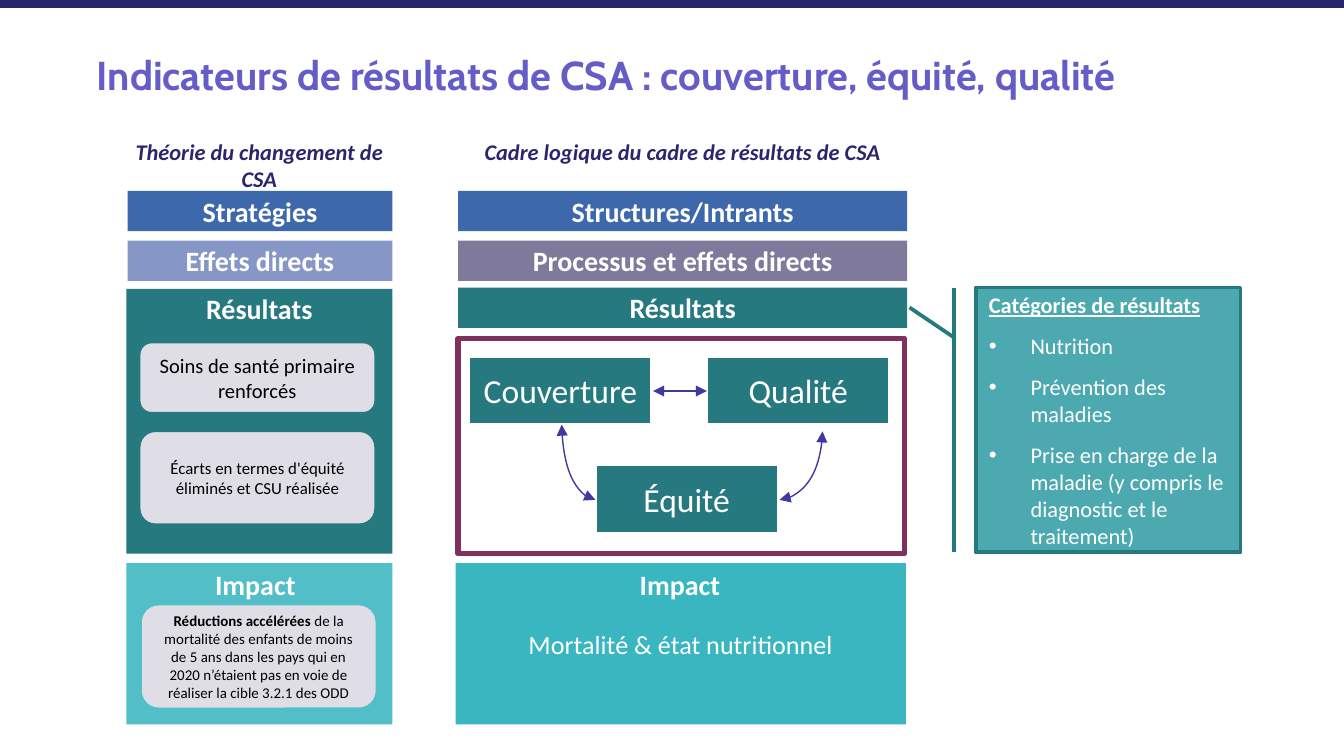
"""Build the slide on result indicators: coverage, equity and quality."""
from dataclasses import dataclass
from typing import Optional

from lxml import etree
from pptx import Presentation
from pptx.dml.color import RGBColor
from pptx.enum import shapes, text
from pptx.oxml import ns
from pptx.util import Inches, Pt

WHITE = RGBColor(0xFF, 0xFF, 0xFF)
BLACK = RGBColor(0, 0, 0)
NAVY = RGBColor(0x2A, 0x24, 0x6C)
HEADING = RGBColor(0x2A, 0x25, 0x6C)
VIOLET = RGBColor(0x64, 0x5D, 0xC7)
BLUE = RGBColor(0x3D, 0x69, 0xAC)
PERIWINKLE = RGBColor(0x86, 0x96, 0xC7)
MAUVE = RGBColor(0x7F, 0x7A, 0x9B)
TEAL = RGBColor(0x26, 0x79, 0x7F)
TURQUOISE = RGBColor(0x39, 0xB6, 0xC0)
PALE_TURQUOISE = RGBColor(0x53, 0xBF, 0xC8)
CALLOUT_FILL = RGBColor(0x4D, 0xA9, 0xB0)
LILAC = RGBColor(0xDF, 0xDE, 0xE6)
INDIGO = RGBColor(0x3F, 0x38, 0xA2)
PLUM = RGBColor(0x7F, 0x30, 0x5D)

RECTANGLE = shapes.MSO_SHAPE.RECTANGLE
ROUNDED = shapes.MSO_SHAPE.ROUNDED_RECTANGLE
CALLOUT = shapes.MSO_SHAPE.LINE_CALLOUT_1_BORDER_AND_ACCENT_BAR
THEORY_LEFT, THEORY_WIDTH = 0.95, 1.97
FRAME_LEFT, FRAME_WIDTH = 3.41, 3.34
NODE_WIDTH, NODE_HEIGHT = 1.36, 0.51


@dataclass
class Box:
    left: float
    top: float
    width: float
    height: float
    fill: Optional[RGBColor] = None
    text: str = ""
    size: float = 15
    bold: bool = False
    color: RGBColor = WHITE
    line: Optional[RGBColor] = None
    line_width: float = 0.75
    shape: shapes.MSO_SHAPE = RECTANGLE
    alpha: int = 100
    bold_lead: str = ""


@dataclass
class Label:
    left: float
    top: float
    width: float
    height: float
    text: str
    size: float = 15
    color: RGBColor = WHITE
    italic: bool = False


@dataclass
class Arrow:
    start: tuple[float, float]
    end: tuple[float, float]
    preset: str = "curvedConnector2"


def band(left: float, top: float, width: float, fill: RGBColor, caption: str) -> Box:
    """Describe a bold one-line band."""
    return Box(left, top, width, 0.3, fill, caption, bold=True)


def node(left: float, top: float, caption: str) -> Box:
    """Describe one of the three linked result dimensions."""
    return Box(left, top, NODE_WIDTH, NODE_HEIGHT, TEAL, caption, 18, line=WHITE, line_width=1.5)


def card(left: float, top: float, height: float, caption: str, size: float,
         line: RGBColor = TEAL, bold_lead: str = "") -> Box:
    """Describe a rounded card in the theory column."""
    return Box(left, top, 1.75, height, LILAC, caption, size, color=BLACK,
               line=line, shape=ROUNDED, bold_lead=bold_lead)


def set_font(paragraph, size: float, color: RGBColor, bold: Optional[bool] = None,
             italic: Optional[bool] = None, name: str = "Calibri") -> None:
    """Set the font of a whole paragraph."""
    font = paragraph.font
    font.name, font.size, font.bold, font.italic = name, Pt(size), bold, italic
    font.color.rgb = color


def set_frame(frame, anchor: text.MSO_ANCHOR, side: float = 0.07, edge: float = 0.04) -> None:
    """Set wrapping, anchor and margins of a text frame."""
    frame.word_wrap = True
    frame.vertical_anchor = anchor
    frame.margin_left = frame.margin_right = Inches(side)
    frame.margin_top = frame.margin_bottom = Inches(edge)


def add_box(slide, box: Box):
    """Draw a filled or outlined shape with its text."""
    shape = slide.shapes.add_shape(box.shape, Inches(box.left), Inches(box.top),
                                   Inches(box.width), Inches(box.height))
    shape.shadow.inherit = False
    if box.fill is None:
        shape.fill.background()
    else:
        shape.fill.solid()
        shape.fill.fore_color.rgb = box.fill
    if box.alpha < 100:
        color = shape._element.spPr.find(".//" + ns.qn("a:srgbClr"))
        etree.SubElement(color, ns.qn("a:alpha"), val=str(box.alpha * 1000))
    if box.line is None:
        shape.line.fill.background()
    else:
        shape.line.color.rgb = box.line
        shape.line.width = Pt(box.line_width)
    if box.text:
        set_frame(shape.text_frame, text.MSO_ANCHOR.MIDDLE)
        paragraph = shape.text_frame.paragraphs[0]
        paragraph.alignment = text.PP_ALIGN.CENTER
        set_font(paragraph, box.size, box.color, box.bold)
        if box.bold_lead:
            lead = paragraph.add_run()
            lead.text = box.bold_lead
            lead.font.bold = True
        paragraph.add_run().text = box.text
    return shape


def add_label(slide, label: Label) -> None:
    """Draw a centred bold text box."""
    shape = slide.shapes.add_textbox(Inches(label.left), Inches(label.top),
                                     Inches(label.width), Inches(label.height))
    set_frame(shape.text_frame, text.MSO_ANCHOR.TOP)
    paragraph = shape.text_frame.paragraphs[0]
    paragraph.text = label.text
    paragraph.alignment = text.PP_ALIGN.CENTER
    set_font(paragraph, label.size, label.color, True, label.italic)


def add_arrow(slide, arrow: Arrow) -> None:
    """Draw a curved connector with a head at both ends."""
    connector = slide.shapes.add_connector(shapes.MSO_CONNECTOR.CURVE,
                                           *map(Inches, arrow.start + arrow.end))
    connector.line.color.rgb = INDIGO
    connector.line.width = Pt(0.75)
    properties = connector._element.spPr
    properties.find(ns.qn("a:prstGeom")).set("prst", arrow.preset)
    line = properties.find(ns.qn("a:ln"))
    for end in ("a:headEnd", "a:tailEnd"):
        etree.SubElement(line, ns.qn(end), type="triangle")
    etree.SubElement(properties, ns.qn("a:effectLst"))


def add_callout(slide, box: Box, heading: str, items: list[str]) -> None:
    """Draw the accent callout with its underlined heading and bullets."""
    shape = add_box(slide, box)
    for index, value in enumerate((0.188, -0.083, 0.075, -0.25)):
        shape.adjustments[index] = value
    frame = shape.text_frame
    set_frame(frame, text.MSO_ANCHOR.MIDDLE, 0.1, 0.05)
    frame.text = "\n".join([heading, *items])
    for index, paragraph in enumerate(frame.paragraphs):
        paragraph.alignment = text.PP_ALIGN.LEFT
        set_font(paragraph, 12, WHITE, index == 0)
        if index == 0:
            paragraph.font.underline = True
            continue
        paragraph.space_before = Pt(7.5)
        properties = paragraph._p.get_or_add_pPr()
        properties.set("marL", str(Inches(0.31)))
        properties.set("indent", str(-Inches(0.31)))
        defaults = properties.find(ns.qn("a:defRPr"))
        defaults.addprevious(etree.Element(ns.qn("a:buFont"), typeface="Arial"))
        defaults.addprevious(etree.Element(ns.qn("a:buChar"), char="•"))


def add_title(slide, caption: str) -> None:
    """Place and format the title placeholder."""
    title = slide.shapes.title
    title.left, title.top, title.width, title.height = map(Inches, (0.62, 0.27, 8.76, 0.63))
    title.text_frame.text = caption
    set_frame(title.text_frame, text.MSO_ANCHOR.TOP, 0.1, 0.1)
    paragraph = title.text_frame.paragraphs[0]
    paragraph.alignment = text.PP_ALIGN.LEFT
    set_font(paragraph, 21.6, VIOLET, True, name="Cabin")


ITEMS = [
    Box(0, 0, 10, 0.06, NAVY),
    Label(0.81, 0.99, 2.24, 0.48, "Théorie du changement de CSA", 12, HEADING, True),
    band(THEORY_LEFT, 1.42, THEORY_WIDTH, BLUE, "Stratégies"),
    band(THEORY_LEFT, 1.79, THEORY_WIDTH, PERIWINKLE, "Effets directs"),
    Box(0.94, 2.15, 1.98, 1.97, TEAL),
    Label(1.06, 2.13, 1.74, 0.33, "Résultats"),
    card(1.04, 2.55, 0.52, "Soins de santé primaire renforcés", 11),
    card(1.04, 3.21, 0.69, "Écarts en termes d'équité éliminés et CSU réalisée", 9),
    Box(0.94, 4.19, 1.98, 1.2, TURQUOISE, alpha=87),
    Label(1.03, 4.18, 1.74, 0.33, "Impact"),
    card(1.05, 4.5, 0.77, "de la mortalité des enfants de moins de 5 ans dans les pays qui en 2020 "
         "n’étaient pas en voie de réaliser la cible 3.2.1 des ODD", 8, PALE_TURQUOISE,
         "Réductions accélérées "),
    Label(FRAME_LEFT, 0.99, FRAME_WIDTH, 0.28, "Cadre logique du cadre de résultats de CSA",
          12, HEADING, True),
    band(FRAME_LEFT, 1.42, FRAME_WIDTH, BLUE, "Structures/Intrants"),
    band(FRAME_LEFT, 1.79, FRAME_WIDTH, MAUVE, "Processus et effets directs"),
    band(FRAME_LEFT, 2.14, FRAME_WIDTH, TEAL, "Résultats"),
    node(3.49, 2.65, "Couverture"),
    node(5.26, 2.65, "Qualité"),
    node(4.43, 3.46, "Équité"),
    Arrow((4.43, 3.72), (4.18, 3.16)),
    Arrow((4.86, 2.91), (5.26, 2.91), "curvedConnector3"),
    Arrow((5.8, 3.72), (6.12, 3.21)),
    Box(FRAME_LEFT, 2.52, 3.32, 1.6, line=PLUM, line_width=3),
    Box(3.39, 4.19, 3.35, 1.2, TURQUOISE, "Mortalité & état nutritionnel", 14),
    Label(3.91, 4.18, 2.3, 0.33, "Impact"),
]
DRAW = {Box: add_box, Label: add_label, Arrow: add_arrow}


def main() -> None:
    """Build and save the presentation."""
    presentation = Presentation()
    presentation.slide_width = Inches(10)
    presentation.slide_height = presentation.slide_width * 9 // 16
    slide = presentation.slides.add_slide(presentation.slide_layouts[5])
    add_title(slide, "Indicateurs de résultats de CSA : couverture, équité, qualité")
    for item in ITEMS:
        DRAW[type(item)](slide, item)
    add_callout(slide, Box(7.26, 2.14, 1.97, 1.97, CALLOUT_FILL, line=TEAL, line_width=2,
                           shape=CALLOUT),
                "Catégories de résultats",
                ["Nutrition", "Prévention des maladies",
                 "Prise en charge de la maladie (y compris le diagnostic et le traitement)"])
    presentation.save("out.pptx")


if __name__ == "__main__":
    main()
